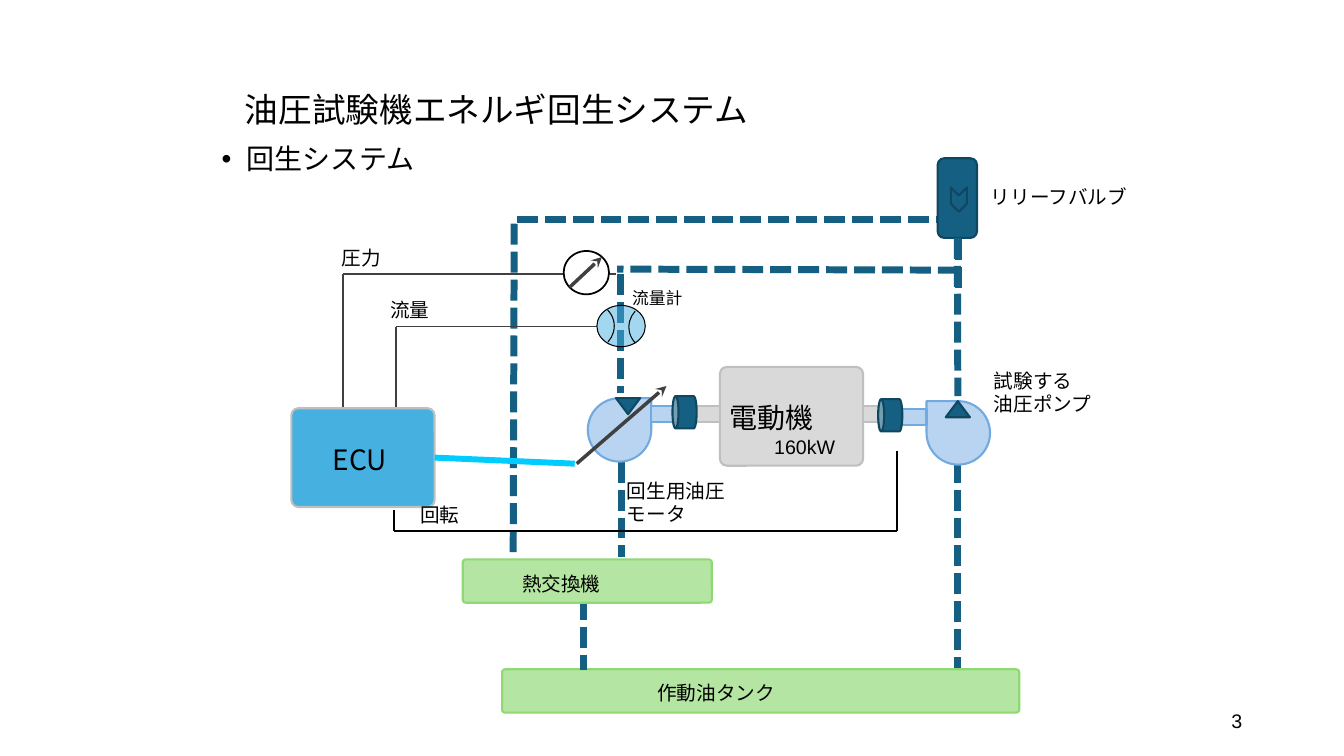
from lxml import etree
from pptx import Presentation
from pptx.dml.color import RGBColor
from pptx.enum.dml import MSO_LINE
from pptx.enum.shapes import MSO_CONNECTOR, MSO_SHAPE as SHAPE
from pptx.enum.text import MSO_ANCHOR, PP_ALIGN
from pptx.oxml.ns import qn
from pptx.util import Inches, Pt

COLORS = {
    "ink": "000000", "white": "FFFFFF", "wire": "404040", "pipe": "156082",
    "pipe_edge": "104760", "pump": "B8D4F0", "pump_edge": "71AAE0",
    "grey": "D9D9D9", "grey_edge": "BFBFBF", "green": "B4E5A2",
    "green_edge": "8ED973", "ecu": "46B1E1", "command": "00CCFF",
}
CJK = "Noto Sans CJK JP"


def rgb(name):
    """Return the named colour."""
    return RGBColor.from_string(COLORS[name])


def add_run(p, text, size, font=CJK):
    """Add one formatted run to a paragraph."""
    r = p.add_run()
    r.text = text
    r.font.size = Pt(size)
    r.font.name = font
    r.font.color.rgb = rgb("ink")
    etree.SubElement(r.font._element, qn("a:ea"), typeface=font)


def label(s, x, y, w, h, lines, size=14, font=CJK, wrap=True):
    """Add a text box with one paragraph per line."""
    tf = s.shapes.add_textbox(Inches(x), Inches(y), Inches(w), Inches(h)).text_frame
    tf.word_wrap = wrap
    for i, text in enumerate(lines):
        p = tf.add_paragraph() if i else tf.paragraphs[0]
        add_run(p, text, size, font)
    return tf


def block(s, kind, x, y, w, h, fill, edge, width=1.5, rot=0, adj=(), flip=""):
    """Add a preset shape; a fill of None leaves it open."""
    sp = s.shapes.add_shape(kind, Inches(x), Inches(y), Inches(w), Inches(h))
    sp.shadow.inherit = False
    if fill:
        sp.fill.solid()
        sp.fill.fore_color.rgb = rgb(fill)
    else:
        sp.fill.background()
    sp.line.color.rgb = rgb(edge)
    sp.line.width = Pt(width)
    sp.rotation = rot
    for i, value in enumerate(adj):
        sp.adjustments[i] = value
    for axis in flip:
        sp._element.spPr.find(qn("a:xfrm")).set("flip" + axis, "1")
    return sp


def line(s, start, end, color, width, dashed=False, arrow=False):
    """Add a straight connector between two points."""
    c = s.shapes.add_connector(MSO_CONNECTOR.STRAIGHT, *map(Inches, start + end))
    c.line.color.rgb = rgb(color)
    c.line.width = Pt(width)
    if dashed:
        c.line.dash_style = MSO_LINE.SQUARE_DOT
    if arrow:
        etree.SubElement(c.line._get_or_add_ln(), qn("a:tailEnd"), type="stealth")
    etree.SubElement(c._element.spPr, qn("a:effectLst"))
    return c


def pipe(s, start, end):
    """Add a dashed oil pipe."""
    return line(s, start, end, "pipe", 5, dashed=True)


def signal(s, points, color="wire"):
    """Add a signal wire through the given points."""
    for start, end in zip(points, points[1:]):
        line(s, start, end, color, 1.25)


def heading(s, x, y, w, h):
    """Place the title, with the bulleted subtitle below it."""
    title = s.shapes.title
    title.left, title.top, title.width, title.height = map(Inches, (x, y, w, h))
    tf = title.text_frame
    tf.vertical_anchor = MSO_ANCHOR.MIDDLE
    p = tf.paragraphs[0]
    p.alignment = PP_ALIGN.LEFT
    p.line_spacing = 0.9
    add_run(p, "油圧試験機エネルギ回生システム", 24)
    p = label(s, x - 0.23, y + 0.74, 2.49, 0.43, ["回生システム"], 20).paragraphs[0]
    p.line_spacing = 0.9
    pPr = p._p.get_or_add_pPr()
    pPr.set("marL", str(Inches(0.25)))
    pPr.set("indent", str(Inches(-0.25)))
    etree.SubElement(pPr, qn("a:buFont"), typeface="Arial")
    etree.SubElement(pPr, qn("a:buChar"), char="•")


def piping(s):
    """Draw the oil pipes between the machines."""
    for start, end in (
        ((9.51, 2.37), (9.51, 2.92)), ((9.5, 4.58), (9.5, 6.63)),
        ((9.49, 2.18), (5.09, 2.18)), ((5.1, 2.22), (5.09, 5.53)),
        ((9.51, 2.68), (6.12, 2.67)), ((6.15, 2.72), (6.15, 3.9)),
        ((6.16, 4.58), (6.16, 5.53)),
    ):
        pipe(s, start, end)


def relief_valve(s, x, y, w, h):
    """Draw the relief valve and its pipe down to the tested pump."""
    valve = block(s, SHAPE.ROUNDED_RECTANGLE, x, y, w, h, "pipe", "pipe_edge")
    block(s, SHAPE.CHEVRON, x + 0.09, y + 0.33, 0.24, 0.16, "pipe", "pipe_edge", rot=90)
    label(s, x + w + 0.04, y + 0.22, 1.57, 0.34, ["リリーフバルブ"])
    pipe(s, (x + w / 2, y + h), (9.5, 3.93)).begin_connect(valve, 2)


def motor(s, x, y, w, h):
    """Draw the electric motor with a shaft on each side."""
    block(s, SHAPE.ROUNDED_RECTANGLE, x, y, w, h, "grey", "grey_edge", adj=[0.07])
    for left in (x - 0.24, x + w):
        block(s, SHAPE.RECTANGLE, left, y + 0.39, 0.24, 0.16, "grey", "grey_edge")
    label(s, x, y + 0.28, 1.5, 0.44, ["電動機"], 20)
    label(s, x + 0.44, y + 0.63, 0.81, 0.34, ["160kW"], font="Arial", wrap=False)


def pump(s, x, y, size, shaft_x, mark_x, coupling_x, flip="", mark_flip=""):
    """Draw a hydraulic pump with its shaft, flow mark and coupling."""
    block(s, SHAPE.TEAR, x, y, size, size, "pump", "pump_edge", flip=flip)
    block(s, SHAPE.RECTANGLE, x + shaft_x, y + 0.08, 0.24, 0.16, "pump", "pump_edge")
    block(s, SHAPE.ISOSCELES_TRIANGLE, x + mark_x, y, 0.24, 0.16, "pipe", "pipe_edge",
          flip=mark_flip)
    block(s, SHAPE.CAN, x + coupling_x, y + 0.02, 0.32, 0.24, "pipe", "pipe_edge", rot=270)


def green_bar(s, x, y, w, h, text, text_x):
    """Draw a green vessel with its name inside."""
    block(s, SHAPE.ROUNDED_RECTANGLE, x, y, w, h, "green", "green_edge", adj=[0.07])
    label(s, x + text_x, y + 0.07, 1.5, 0.34, [text], font="Arial Narrow")


def gauge(s, x, y, w, h):
    """Draw the pressure gauge."""
    block(s, SHAPE.OVAL, x, y, w, h, "white", "ink", 1.25)
    line(s, (x + 0.06, y + 0.36), (x + 0.38, y + 0.06), "wire", 2.5, arrow=True)


def flow_meter(s, x, y, w, h):
    """Draw the translucent flow meter with its two arcs."""
    sp = block(s, SHAPE.OVAL, x, y, w, h, "ecu", "ink", 0.75)
    color = sp._element.spPr.find(qn("a:solidFill"))[0]
    etree.SubElement(color, qn("a:alpha"), val="50000")
    for dx, rot in ((-0.28, 44.6), (0.32, 224.9)):
        block(s, SHAPE.ARC, x + dx, y - 0.02, 0.45, 0.46, None, "ink", 0.75, rot, (162, 214.68))
    label(s, x + 0.25, y - 0.22, 0.91, 0.3, ["流量計"], 12)


def controller(s, x, y, w, h):
    """Draw the ECU, its sensor wires and its command line."""
    signal(s, [(5.92, 3.24), (x + 1.04, 3.24), (x + 1.04, y)])
    signal(s, [(6.11, 2.72), (x + 0.51, 2.72), (x + 0.51, y)])
    ecu = block(s, SHAPE.ROUNDED_RECTANGLE, x, y, w, h, "ecu", "grey_edge", adj=[0.07])
    label(s, x + 0.31, y + 0.29, 0.87, 0.44, ["ECU"], 20)
    line(s, (x + w, y + h / 2), (5.7, 4.6), "command", 4.25).begin_connect(ecu, 3)
    signal(s, [(x + 1.02, 5.06), (x + 1.02, 5.27), (8.9, 5.27), (8.9, 4.47)], "ink")
    for dx, dy, text in ((0.4, -1.66, "圧力"), (0.88, -1.14, "流量"), (1.18, 0.89, "回転")):
        label(s, x + dx, y + dy, 1.3, 0.34, [text])


def page_number(s, x, y, w, h):
    """Place the page number."""
    tf = label(s, x, y, w, h, ["3"], font="Arial")
    tf.vertical_anchor = MSO_ANCHOR.MIDDLE
    tf.paragraphs[0].alignment = PP_ALIGN.RIGHT


def main():
    """Build the slide and save it."""
    prs = Presentation()
    prs.slide_width, prs.slide_height = Inches(13.33), Inches(7.5)
    s = prs.slides.add_slide(prs.slide_layouts[5])
    heading(s, 2.33, 0.65, 8.5, 0.92)
    piping(s)
    relief_valve(s, 9.3, 1.57, 0.39, 0.79)
    motor(s, 7.14, 3.64, 1.42, 0.98)
    pump(s, 9.19, 3.98, 0.63, -0.24, 0.19, -0.52, flip="H")
    label(s, 9.76, 3.61, 1.3, 0.57, ["試験する", "油圧ポンプ"])
    pump(s, 5.83, 3.95, 0.63, 0.63, 0.28, 0.8, mark_flip="HV")
    label(s, 6.12, 4.7, 1.5, 0.57, ["回生用油圧モータ"])
    line(s, (5.72, 4.6), (6.61, 3.83), "wire", 2.5, arrow=True)
    green_bar(s, 4.98, 6.64, 5.13, 0.43, "作動油タンク", 1.44)
    pipe(s, (5.79, 5.94), (5.79, 6.65))
    green_bar(s, 4.59, 5.55, 2.47, 0.43, "熱交換機", 0.49)
    controller(s, 2.89, 4.05, 1.42, 0.98)
    gauge(s, 5.59, 2.49, 0.45, 0.43)
    flow_meter(s, 5.92, 3.03, 0.48, 0.41)
    page_number(s, 9.42, 6.95, 3, 0.4)
    prs.save("out.pptx")


if __name__ == "__main__":
    main()
